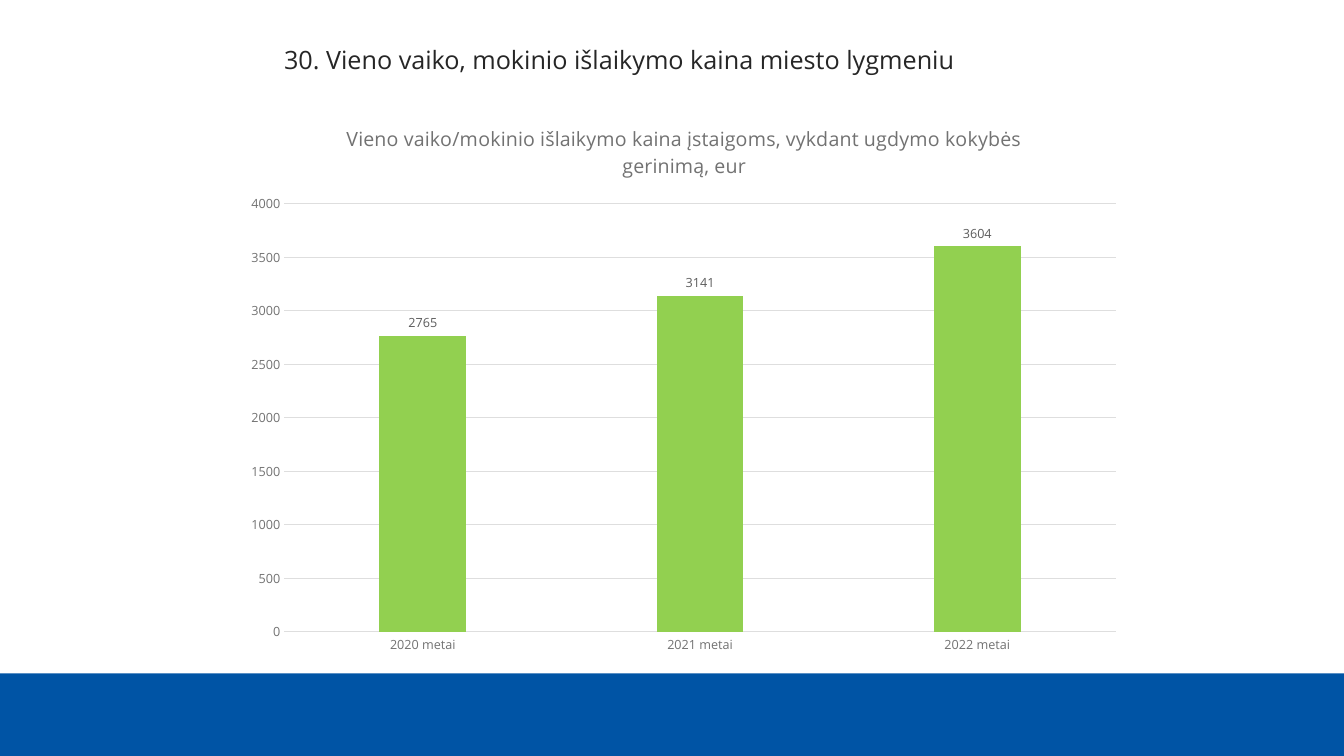
from lxml import etree
from pptx import Presentation
from pptx.chart.data import CategoryChartData
from pptx.dml.color import RGBColor
from pptx.enum.chart import XL_CHART_TYPE as CT, XL_LABEL_POSITION as LP, XL_TICK_MARK as TM
from pptx.enum.shapes import MSO_SHAPE
from pptx.oxml.ns import qn
from pptx.util import Cm, Pt

BLUE = RGBColor(0x00, 0x54, 0xA5)
GREEN = RGBColor(0x92, 0xD0, 0x50)
DARK = RGBColor(0x26, 0x26, 0x26)
GREY = RGBColor(0x72, 0x72, 0x72)
LABEL_GREY = RGBColor(0x5C, 0x5C, 0x5C)
LINE_GREY = RGBColor(0xDE, 0xDE, 0xDE)
FONT = "Open Sans"


def set_font(font, size, color):
    for name, value in {"name": FONT, "size": Pt(size), "bold": False}.items():
        setattr(font, name, value)
    font.color.rgb = color


prs = Presentation()
prs.slide_width, prs.slide_height = Cm(33.87), Cm(19.05)
s = prs.slides.add_slide(prs.slide_layouts[6])

band = s.shapes.add_shape(MSO_SHAPE.RECTANGLE, 0, Cm(16.97), prs.slide_width, Cm(2.08))
band.shadow.inherit = False
band.fill.solid()
band.fill.fore_color.rgb = BLUE
band.line.fill.background()

data = CategoryChartData(number_format="0")
data.categories = [f"{year} metai" for year in (2020, 2021, 2022)]
data.add_series("Series 1", (2765, 3141, 3604))
chart = s.shapes.add_chart(
    CT.COLUMN_CLUSTERED, Cm(5.89), Cm(2.59), Cm(22.71), Cm(14.17), data
).chart
set_font(chart.font, 10, DARK)
chart.has_legend = False

chart.has_title = True
p = chart.chart_title.text_frame.paragraphs[0]
r = p.add_run()
r.text = "Vieno vaiko/mokinio išlaikymo kaina įstaigoms, vykdant ugdymo kokybės gerinimą, eur"
set_font(r.font, 14, GREY)
chart.chart_title.include_in_layout = False

for axis in (chart.category_axis, chart.value_axis):
    axis.major_tick_mark = axis.minor_tick_mark = TM.NONE
    set_font(axis.tick_labels.font, 9, GREY)

values = chart.value_axis
for name, value in {"minimum_scale": 0, "maximum_scale": 4000, "major_unit": 500}.items():
    setattr(values, name, value)
values.tick_labels.number_format = "0"
values.tick_labels.number_format_is_linked = False
values.format.line.fill.background()
for line in (chart.category_axis.format.line, values.major_gridlines.format.line):
    line.color.rgb = LINE_GREY
    line.width = Pt(0.75)

plot = chart.plots[0]
for name, value in {"gap_width": 219, "overlap": -27, "vary_by_categories": False}.items():
    setattr(plot, name, value)
fill = plot.series[0].format.fill
fill.solid()
fill.fore_color.rgb = GREEN

plot.has_data_labels = True
labels = plot.data_labels
for name, value in {
    "show_value": True,
    "number_format": "0",
    "number_format_is_linked": False,
    "position": LP.OUTSIDE_END,
}.items():
    setattr(labels, name, value)
set_font(labels.font, 9, LABEL_GREY)

plot_area = chart.element.find(".//" + qn("c:plotArea"))
layout = plot_area.find(qn("c:layout"))
if layout is None:
    layout = etree.Element(qn("c:layout"))
    plot_area.insert(0, layout)
manual = etree.SubElement(layout, qn("c:manualLayout"))
for tag, value in {
    "layoutTarget": "inner", "xMode": "edge", "yMode": "edge",
    "x": 0.056, "y": 0.18, "w": 0.923, "h": 0.761,
}.items():
    etree.SubElement(manual, qn(f"c:{tag}")).set("val", str(value))

tf = s.shapes.add_textbox(Cm(6.91), Cm(0.99), Cm(20.8), Cm(1.8)).text_frame
tf.word_wrap = True
r = tf.paragraphs[0].add_run()
r.text = "30. Vieno vaiko, mokinio išlaikymo kaina miesto lygmeniu"
set_font(r.font, 18, DARK)

prs.save("out.pptx")
